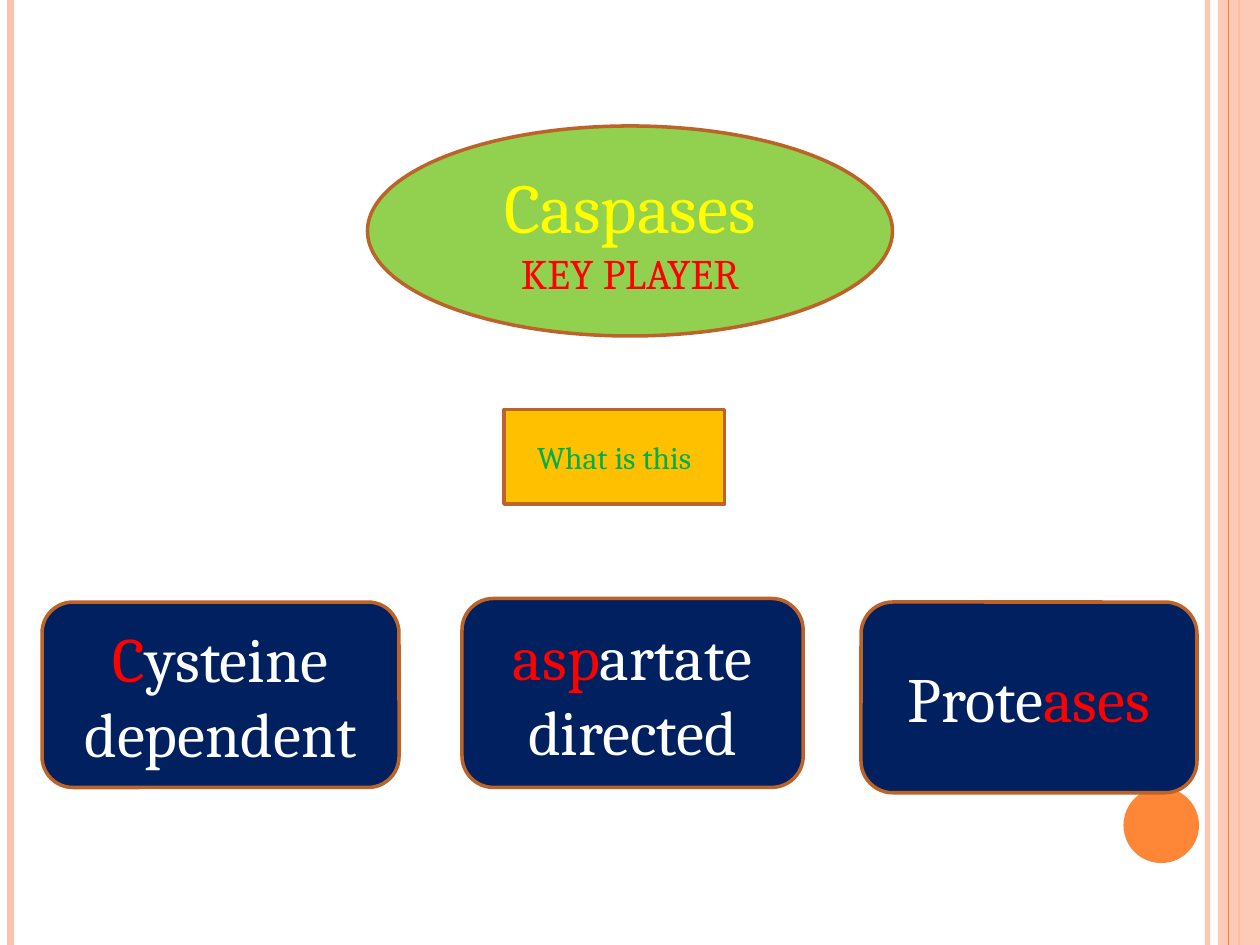
from lxml import etree
from pptx import Presentation
from pptx.dml.color import RGBColor
from pptx.enum import shapes, text
from pptx.oxml import ns
from pptx.util import Pt

COLORS = {
    "peach": "FEC3AE", "orange": "FE8637", "rust": "BC6329",
    "lime": "92D050", "amber": "FFC000", "navy": "002060",
    "yellow": "FFFF00", "red": "FF0000", "green": "00B050", "white": "FFFFFF",
}
KIND = shapes.MSO_SHAPE


def set_color(fmt, name, alpha=100):
    """Apply a solid palette colour, with opacity in percent."""
    fmt.solid()
    fmt.fore_color.rgb = RGBColor.from_string(COLORS[name])
    if alpha < 100:
        clr = fmt._xPr.find(".//" + ns.qn("a:srgbClr"))
        etree.SubElement(clr, ns.qn("a:alpha"), val=str(alpha * 1000))


def add_box(kind, box, fill, paragraphs=(), alpha=100):
    """Add a filled shape; each paragraph is (size, [(text, colour), ...])."""
    sp = s.shapes.add_shape(kind, *map(Pt, box))
    sp.shadow.inherit = False
    set_color(sp.fill, fill, alpha)
    if not paragraphs:
        sp.line.fill.background()
        return
    set_color(sp.line.fill, "rust")
    sp.line.width = Pt(2)
    tf = sp.text_frame
    tf.word_wrap = True
    tf.vertical_anchor = text.MSO_ANCHOR.MIDDLE
    for i, (size, runs) in enumerate(paragraphs):
        p = tf.paragraphs[0] if i == 0 else tf.add_paragraph()
        p.alignment = text.PP_ALIGN.CENTER
        p.font.size = Pt(size)
        p.font.name = "Cambria"
        for words, color in runs:
            r = p.add_run()
            r.text = words
            set_color(r.font.fill, color)


prs = Presentation()
prs.slide_width, prs.slide_height = Pt(720), Pt(540)
s = prs.slides.add_slide(prs.slide_layouts[6])

# Side stripes; the band on the right lies under the last line
stripes = [
    (690, "peach", 3, 93),
    (6, "peach", 4.5, 100),
    (708, "orange", 1.5, 100),
    (702, "orange", 0.75, 100),
]
for x, color, width, alpha in stripes:
    if x == 702:
        add_box(KIND.RECTANGLE, (696, 0, 24, 540), "peach", alpha=87)
    line = s.shapes.add_connector(
        shapes.MSO_CONNECTOR.STRAIGHT, Pt(x), 0, Pt(x), Pt(540))
    set_color(line.line.fill, color, alpha)
    line.line.width = Pt(width)
    etree.SubElement(line._element.spPr, ns.qn("a:effectLst"))

add_box(KIND.OVAL, (642, 450, 43.2, 43.2), "orange")

# Topic and question
add_box(KIND.OVAL, (210, 72, 300, 120), "lime",
        [(40, [("Caspases", "yellow")]), (24, [("KEY PLAYER", "red")])])
add_box(KIND.RECTANGLE, (288, 234, 126, 54), "amber",
        [(18, [("What is this", "green")])])

# Parts of the name
parts = [
    ((24, 344, 204, 106), [("C", "red"), ("ysteine dependent", "white")]),
    ((264, 342, 195, 108), [("asp", "red"), ("artate directed", "white")]),
    ((492, 344, 192, 109), [("Prote", "white"), ("ases", "red")]),
]
for box, runs in parts:
    add_box(KIND.ROUNDED_RECTANGLE, box, "navy", [(36, runs)])

prs.save("out.pptx")
